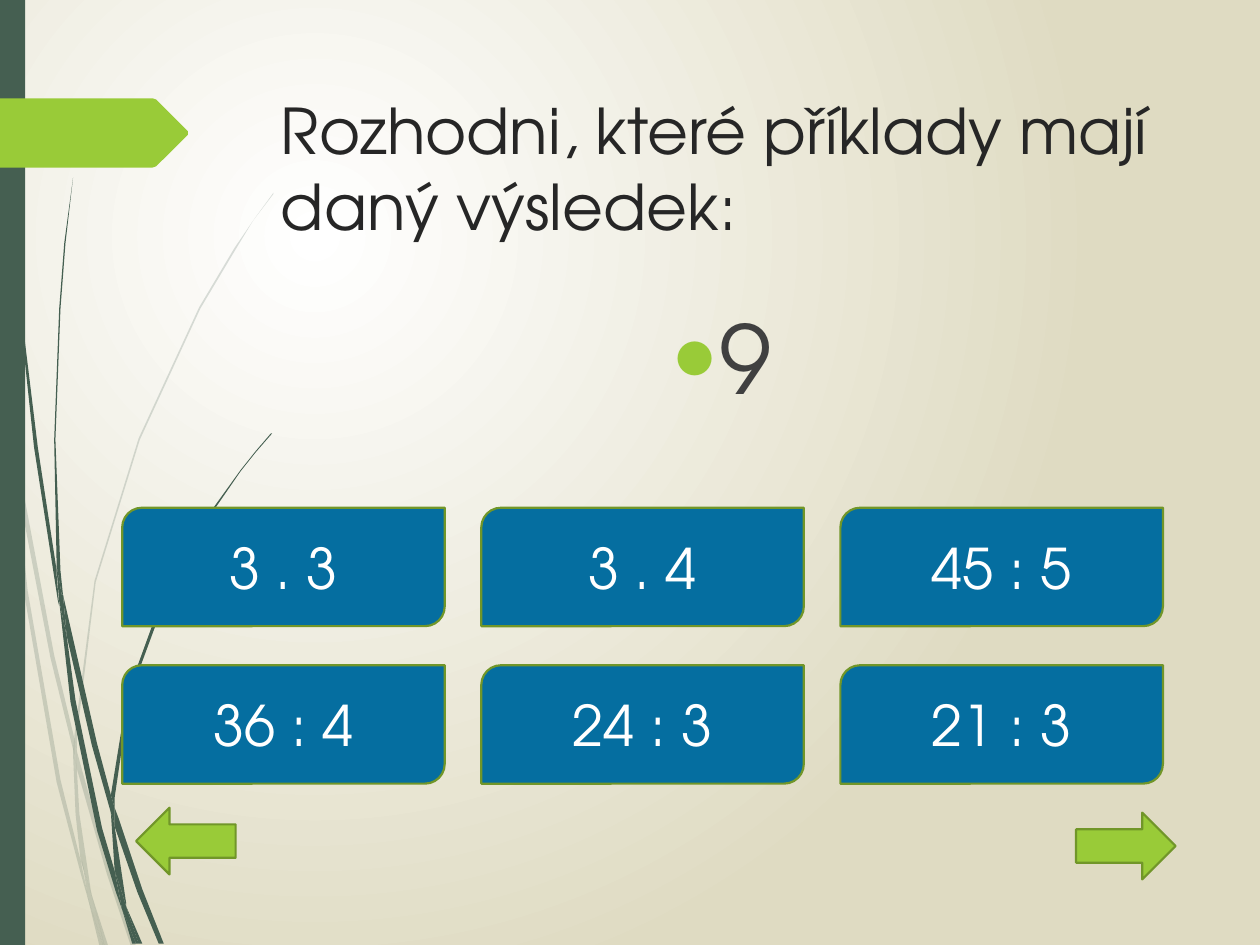
from dataclasses import dataclass

from lxml import etree
from pptx import Presentation
from pptx.dml.color import RGBColor
from pptx.enum.shapes import MSO_SHAPE as Shape
from pptx.enum.text import MSO_ANCHOR as Anchor, MSO_AUTO_SIZE as Auto, PP_ALIGN as Align
from pptx.oxml import parse_xml
from pptx.oxml.ns import nsdecls, qn
from pptx.util import Inches, Pt


@dataclass(frozen=True)
class Theme:
    font: str = "TeX Gyre Adventor"
    pine: str = "455F51"
    lime: str = "99CB38"
    olive: str = "719629"
    blue: str = "056EA0"
    white: str = "FFFFFF"
    sand: str = "DFDBC2"
    ink: str = "262626"
    gray: str = "404040"
    title: int = 36
    goal: int = 54
    task: int = 32
    edge: float = 1.25


T = Theme()

PALE = [
    [(.08, 3.5), (.06, 3.22), (0, 2.82), (0, 2.99), (.07, 3.44)],
    [(.4, 5.22), (.59, 5.99), (.59, 5.86), (.43, 5.2), (.1, 3.45), (.12, 3.76)],
    [(.64, 6.07), (.61, 5.96), (.61, 6.1), (.85, 6.94), (1.04, 7.51), (1.08, 7.51),
     (.88, 6.92)],
    [(.83, 7.51), (.86, 7.51), (.73, 7.11)],
    [(.64, 6.83), (.48, 6.19), (.22, 4.69), (.12, 3.76), (.08, 3.5), (.19, 4.7),
     (.45, 6.21), (.64, 6.93), (.7, 7.14), (.69, 7.07)],
    [(.58, 5.99), (.6, 6.46), (.64, 6.83), (.67, 6.92), (.73, 7.11), (.72, 7.06),
     (.63, 6.46), (.61, 6.1), (.61, 6.08)],
    [(.61, 5.84), (.76, 4.62), (1.11, 3.49), (1.59, 2.45), (1.87, 1.98), (2.01, 1.75),
     (2.17, 1.54), (2.17, 1.53), (2.01, 1.75), (1.86, 1.97), (1.58, 2.44), (1.1, 3.48),
     (.75, 4.61), (.59, 5.84), (.59, 5.86), (.61, 5.96)],
    [(.7, 7.14), (.79, 7.51), (.82, 7.51)],
    [(.61, 6.08), (.61, 6.1), (.61, 5.96), (.59, 5.86), (.58, 5.99)],
    [(.67, 6.92), (.65, 6.83), (.69, 7.07), (.7, 7.14), (.82, 7.51), (.83, 7.51),
     (.73, 7.11)],
]
DARK = [
    [(.05, 1.1), (.14, 2.33), (.27, 3.55), (.46, 4.77), (.47, 4.81), (.45, 4.57),
     (.45, 4.53), (.3, 3.55), (.15, 2.32), (.06, 1.09), (.04, .48), (.03, 0), (.02, 0),
     (.03, .48)],
    [(.73, 5.92), (.88, 6.45), (.88, 6.33), (.88, 6.31), (.77, 5.9), (.5, 4.72),
     (.53, 5.05)],
    [(.94, 6.49), (.91, 6.41), (.91, 6.56), (1.09, 7.08), (1.26, 7.49), (1.3, 7.49),
     (1.13, 7.06)],
    [(.91, 6.91), (.81, 6.57), (.6, 5.56), (.53, 5.05), (.47, 4.77), (.56, 5.57),
     (.77, 6.59), (.92, 7.08), (.97, 7.22), (.96, 7.17)],
    [(.5, 4.72), (.48, 4.53), (.44, 3.49), (.48, 2.45), (.52, 1.93), (.58, 1.41),
     (.51, 1.93), (.47, 2.45), (.43, 3.49), (.45, 4.49), (.49, 4.72)],
    [(1.1, 7.49), (1.13, 7.49), (1, 7.19)],
    [(.47, 4.77), (.53, 5.05), (.5, 4.72), (.49, 4.72), (.45, 4.49), (.45, 4.53)],
    [(.91, 6.33), (1.03, 5.52), (1.31, 4.76), (1.69, 4.06), (1.91, 3.74), (2.03, 3.59),
     (2.16, 3.44), (2.15, 3.44), (2.03, 3.58), (1.91, 3.73), (1.68, 4.05), (1.29, 4.74),
     (1.01, 5.51), (.88, 6.31), (.91, 6.41)],
    [(.97, 7.22), (1.05, 7.49), (1.08, 7.49)],
    [(.88, 6.45), (.91, 6.91), (.96, 7.06), (1, 7.19), (1, 7.16), (.91, 6.56), (.9, 6.51)],
    [(.88, 6.45), (.9, 6.51), (.91, 6.56), (.91, 6.41), (.88, 6.31), (.88, 6.33)],
    [(.96, 7.06), (.91, 6.91), (.96, 7.17), (.97, 7.22), (1.08, 7.49), (1.1, 7.49),
     (1, 7.19)],
]
TAG = [(1.49, 1.07), (1.24, 1.32), (1.21, 1.33), (0, 1.33), (0, .78), (1.21, .78),
       (1.24, .79), (1.49, 1.04)]
TASKS = [["3 . 3", "3 . 4", "45 : 5"], ["36 : 4", "24 : 3", "21 : 3"]]


def rgb(hue):
    return RGBColor.from_string(hue)


def paint(shape, fill, line=None):
    shape.shadow.inherit = False
    shape.fill.solid()
    shape.fill.fore_color.rgb = rgb(fill)
    if line:
        shape.line.color.rgb = rgb(line)
        shape.line.width = Pt(T.edge)
    else:
        shape.line.fill.background()


def write(shape, text, size, hue, align, anchor):
    frame = shape.text_frame
    frame.word_wrap = True
    frame.auto_size = Auto.NONE
    frame.vertical_anchor = anchor
    para = frame.paragraphs[0]
    para.alignment = align
    run = para.add_run()
    run.text = text
    run.font.name = T.font
    run.font.size = Pt(size)
    run.font.color.rgb = rgb(hue)
    return para


def backdrop(slide):
    slide.background.fill.solid()
    props = slide.background._cSld.bg.bgPr
    grad = parse_xml(
        f'<a:gradFill {nsdecls("a")} rotWithShape="1"><a:gsLst>'
        f'<a:gs pos="0"><a:srgbClr val="{T.white}"/></a:gs>'
        f'<a:gs pos="100000"><a:srgbClr val="{T.sand}"/></a:gs></a:gsLst>'
        '<a:path path="circle"><a:fillToRect l="50000" t="50000" r="100000" b="100000"/>'
        '</a:path></a:gradFill>')
    props.replace(props.find(qn("a:solidFill")), grad)


def outline(shapes, points, hue, alpha=None):
    dots = [(Inches(x), Inches(y)) for x, y in points]
    pen = shapes.build_freeform(*dots[0])
    pen.add_line_segments(dots[1:], close=True)
    shape = pen.convert_to_shape()
    paint(shape, hue)
    if alpha:
        tint = shape._element.spPr.find(qn("a:solidFill"))[0]
        etree.SubElement(tint, qn("a:alpha")).set("val", str(alpha * 1000))


def wisps(slide, blades, alpha=None):
    group = slide.shapes.add_group_shape()
    for blade in blades:
        outline(group.shapes, blade, T.pine, alpha)


def block(slide, kind, x, y, w, h, fill, line=None):
    shape = slide.shapes.add_shape(kind, Inches(x), Inches(y), Inches(w), Inches(h))
    paint(shape, fill, line)
    return shape


def heading(slide, text):
    title = slide.shapes.title
    title.left, title.top = Inches(2.13), Inches(0.68)
    title.width, title.height = Inches(7.21), Inches(1.4)
    write(title, text, T.title, T.ink, Align.LEFT, Anchor.TOP)
    slide.shapes._spTree.append(title._element)


def goal(slide, text):
    box = slide.shapes.add_textbox(Inches(2.12), Inches(2.33), Inches(7.21), Inches(1.28))
    para = write(box, text, T.goal, T.gray, Align.CENTER, Anchor.TOP)
    para.space_before = Pt(10)
    props = para._p.get_or_add_pPr()
    props.set("marL", str(Inches(0.38)))
    props.set("indent", str(-Inches(0.38)))
    hue = etree.SubElement(props, qn("a:buClr"))
    etree.SubElement(hue, qn("a:srgbClr")).set("val", T.lime)
    etree.SubElement(props, qn("a:buFont")).set("typeface", T.font)
    etree.SubElement(props, qn("a:buChar")).set("char", "•")


def tasks(slide):
    for row, line in enumerate(TASKS):
        for col, text in enumerate(line):
            card = block(slide, Shape.ROUND_2_DIAG_RECTANGLE, 0.97 + 2.85 * col,
                         4.03 + 1.25 * row, 2.56, 0.94, T.blue, T.olive)
            write(card, text, T.task, T.white, Align.CENTER, Anchor.MIDDLE)


def arrow(slide, x, y, turn=0):
    shape = block(slide, Shape.RIGHT_ARROW, x, y, 0.79, 0.53, T.lime, T.olive)
    shape.rotation = turn


def main():
    deck = Presentation()
    deck.slide_width, deck.slide_height = Inches(10), Inches(7.5)
    slide = deck.slides.add_slide(deck.slide_layouts[5])
    backdrop(slide)
    wisps(slide, PALE, 20)
    wisps(slide, DARK)
    block(slide, Shape.RECTANGLE, 0, 0, 0.2, 7.5, T.pine)
    outline(slide.shapes, TAG, T.lime)
    heading(slide, "Rozhodni, které příklady mají daný výsledek:")
    goal(slide, "9")
    tasks(slide)
    arrow(slide, 8.54, 6.45)
    arrow(slide, 1.08, 6.41, 180)
    deck.save("out.pptx")


if __name__ == "__main__":
    main()
